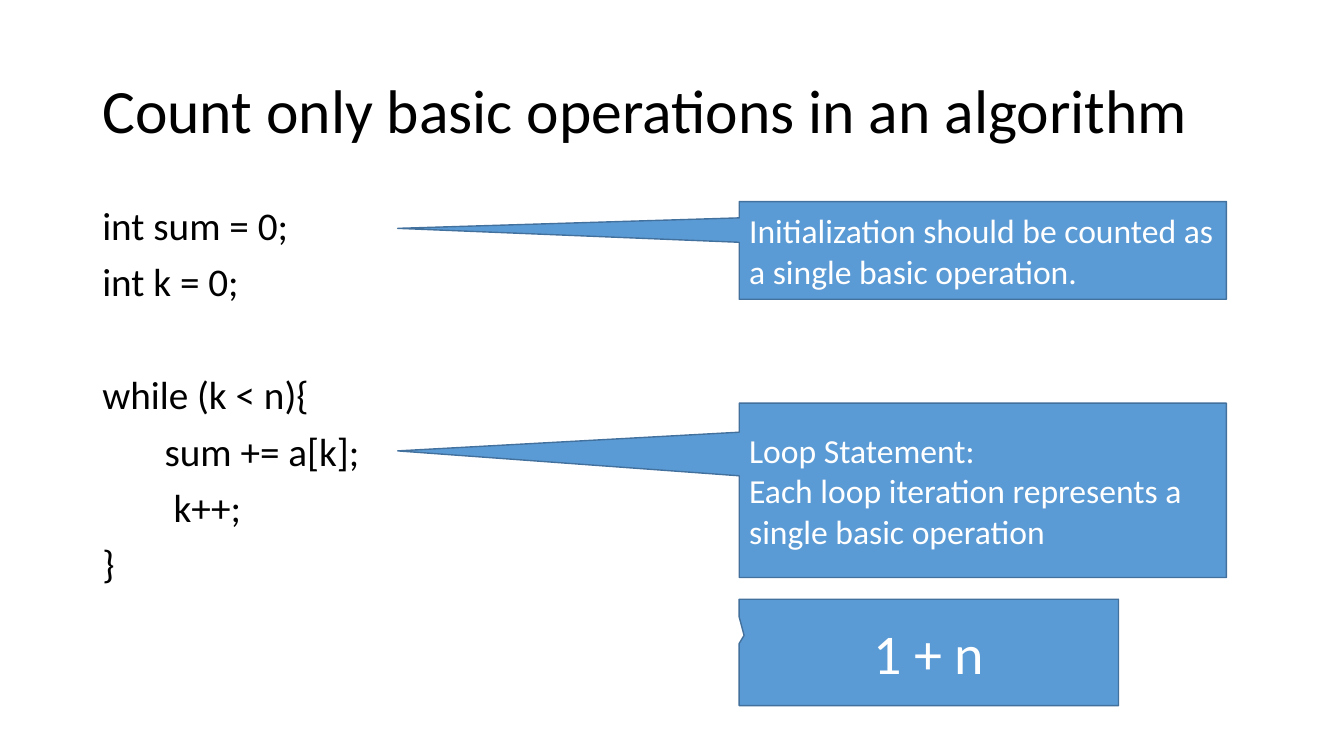
import pptx
import pptx.dml.color
import pptx.enum.shapes
import pptx.enum.text
import pptx.util

Pt = pptx.util.Pt
Align = pptx.enum.text.PP_ALIGN
Anchor = pptx.enum.text.MSO_ANCHOR
BLACK = pptx.dml.color.RGBColor(0, 0, 0)
WHITE = pptx.dml.color.RGBColor(255, 255, 255)
BLUE = pptx.dml.color.RGBColor(0x5B, 0x9B, 0xD5)
DARK_BLUE = pptx.dml.color.RGBColor(0x43, 0x71, 0x9E)

TITLE = "Count only basic operations in an algorithm"
CODE = [
    ("int sum = 0;", 0, 10),
    ("int k = 0;", 0, 10),
    ("while (k < n){", 0, 50.5),
    ("sum += a[k];", 44.5, 10),
    ("k++;", 51, 10),
    ("}", 0, 10),
]
LONG_POINTER = (-1.201, -0.226)
SHORT_POINTER = (-0.487, -0.16)
CALLOUTS = [
    (144, 348, 69.75, LONG_POINTER, 24, Align.LEFT,
     ["Initialization should be counted as a single basic operation."]),
    (288, 348, 124.5, LONG_POINTER, 24, Align.LEFT,
     ["Loop Statement:", "Each loop iteration represents a single basic operation"]),
    (428, 271, 76, SHORT_POINTER, 40, Align.CENTER, ["1 + n"]),
]
CODE_LEFT = 66
CALLOUT_LEFT = 528


def write(shape, lines, size, color, anchor, **paragraph_format):
    frame = shape.text_frame
    frame.word_wrap = True
    frame.vertical_anchor = anchor
    for number, (text, indent, before) in enumerate(lines):
        para = frame.add_paragraph() if number else frame.paragraphs[0]
        values = {"space_before": Pt(before), **paragraph_format}
        for name, value in values.items():
            setattr(para, name, value)
        if indent:
            para._p.get_or_add_pPr().set("marL", str(Pt(indent)))
        span = para.add_run()
        span.text = text
        for name, value in {"name": "Calibri", "size": Pt(size)}.items():
            setattr(span.font, name, value)
        span.font.color.rgb = color


deck = pptx.Presentation()
deck.slide_width, deck.slide_height = Pt(960), Pt(540)
page = deck.slides.add_slide(deck.slide_layouts[6])

title = page.shapes.add_textbox(Pt(CODE_LEFT), Pt(28.75), Pt(828), Pt(104.5))
write(title, [(TITLE, 0, 0)], 44, BLACK, Anchor.MIDDLE, line_spacing=0.9)

code = page.shapes.add_textbox(Pt(CODE_LEFT), Pt(144), Pt(266), Pt(342.5))
write(code, CODE, 28, BLACK, Anchor.TOP, line_spacing=0.9)

for top, width, height, pointer, size, alignment, lines in CALLOUTS:
    callout = page.shapes.add_shape(
        pptx.enum.shapes.MSO_SHAPE.RECTANGULAR_CALLOUT,
        Pt(CALLOUT_LEFT), Pt(top), Pt(width), Pt(height))
    callout.shadow.inherit = False
    callout.adjustments[0], callout.adjustments[1] = pointer
    callout.fill.solid()
    callout.fill.fore_color.rgb = BLUE
    callout.line.color.rgb = DARK_BLUE
    callout.line.width = Pt(1)
    write(callout, [(line, 0, 0) for line in lines], size, WHITE,
          Anchor.MIDDLE, alignment=alignment)

deck.save("out.pptx")
